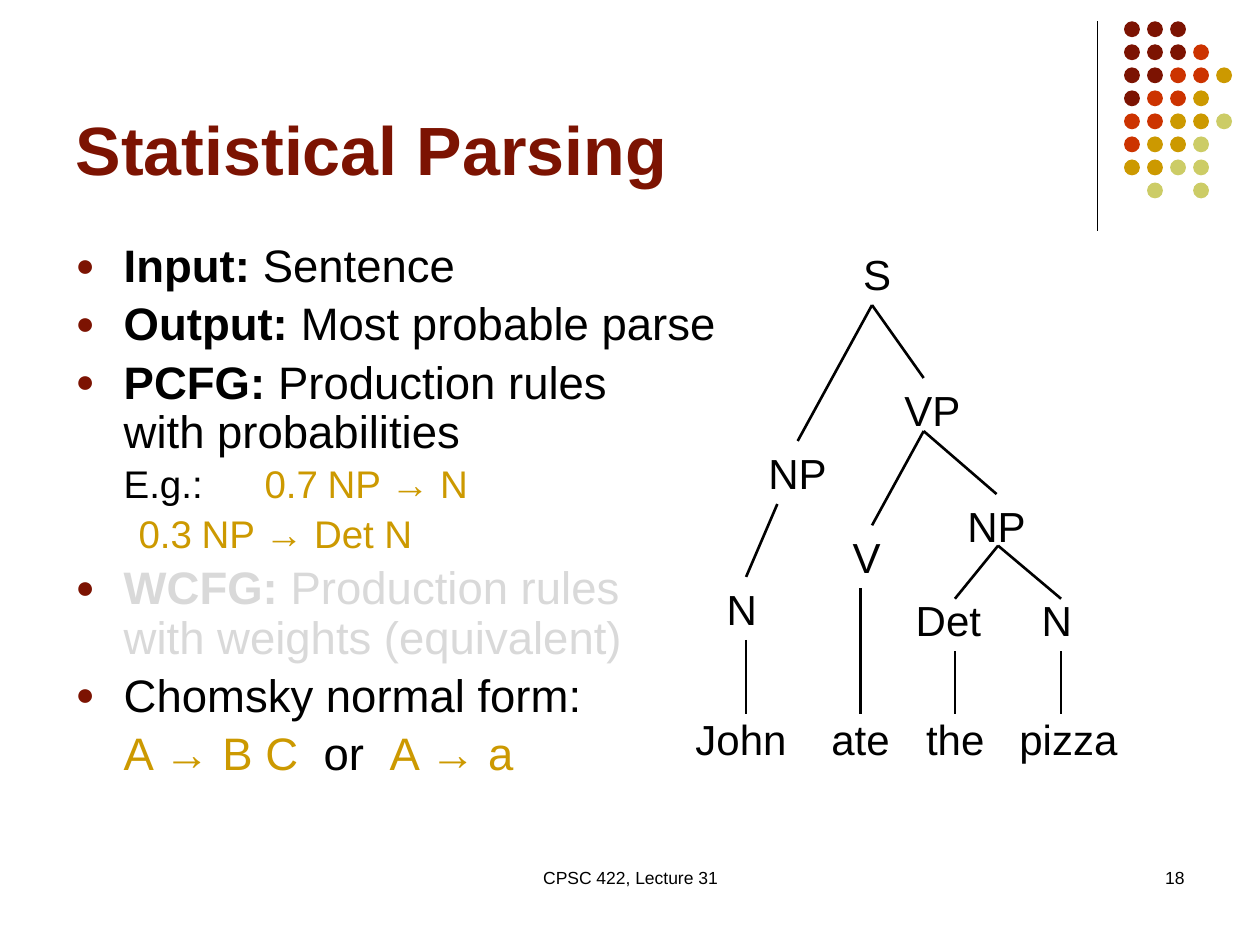
from dataclasses import dataclass

from lxml import etree
from pptx import Presentation
from pptx.dml.color import RGBColor
from pptx.enum.shapes import MSO_CONNECTOR, MSO_SHAPE
from pptx.enum.text import MSO_ANCHOR, MSO_AUTO_SIZE, PP_ALIGN
from pptx.oxml.ns import qn
from pptx.util import Cm, Pt

STRAIGHT = MSO_CONNECTOR.STRAIGHT
OVAL = MSO_SHAPE.OVAL
TOP, BOTTOM = MSO_ANCHOR.TOP, MSO_ANCHOR.BOTTOM
NO_FIT = MSO_AUTO_SIZE.NONE
LEFT, CENTER, RIGHT = PP_ALIGN.LEFT, PP_ALIGN.CENTER, PP_ALIGN.RIGHT
TOP_SITE = 0


@dataclass(frozen=True)
class Theme:
    font: str = "Arial"
    maroon: str = "7C1302"
    red: str = "CC3300"
    gold: str = "CC9900"
    lime: str = "CCCC66"
    ink: str = "000000"
    faded: str = "D9D9D9"
    title: float = 39
    body: float = 26
    example: float = 22
    node: float = 24
    footer: float = 10


class SlideBuilder:
    """Draws styled elements on one slide, with all lengths in centimetres."""

    def __init__(self, slide, theme):
        self.slide = slide
        self.theme = theme

    def style(self, run, size, color, bold=False):
        run.font.name = self.theme.font
        run.font.size = Pt(size)
        run.font.bold = bold
        run.font.color.rgb = RGBColor.from_string(color)

    def place(self, shape, left, top, width, height):
        shape.left, shape.top = Cm(left), Cm(top)
        shape.width, shape.height = Cm(width), Cm(height)

    def tabs(self, paragraph, stops):
        tab_list = etree.SubElement(paragraph._p.get_or_add_pPr(), qn("a:tabLst"))
        for stop in stops:
            etree.SubElement(tab_list, qn("a:tab"), pos=str(Cm(stop)), algn="l")

    def title(self, wording, *box):
        heading = self.slide.shapes.title
        self.place(heading, *box)
        frame = heading.text_frame
        frame.text = wording
        frame.auto_size = NO_FIT
        frame.vertical_anchor = BOTTOM
        frame.paragraphs[0].alignment = LEFT
        self.style(frame.paragraphs[0].runs[0], self.theme.title, self.theme.maroon, True)

    def bullet(self, properties, marked):
        if not marked:
            etree.SubElement(properties, qn("a:buNone"))
            return
        tint = etree.SubElement(properties, qn("a:buClr"))
        etree.SubElement(tint, qn("a:srgbClr"), val=self.theme.maroon)
        etree.SubElement(properties, qn("a:buSzPct"), val="70000")
        etree.SubElement(properties, qn("a:buFont"), typeface=self.theme.font)
        etree.SubElement(properties, qn("a:buChar"), char="●")

    def body(self, items, *box):
        outline = self.slide.placeholders[1]
        self.place(outline, *box)
        frame = outline.text_frame
        frame.auto_size = NO_FIT
        frame.vertical_anchor = TOP
        for index, (kind, pieces) in enumerate(items):
            paragraph = frame.paragraphs[0] if index == 0 else frame.add_paragraph()
            self.item(paragraph, kind, pieces)

    def item(self, paragraph, kind, pieces):
        margin, indent = {
            "bullet": (0.97, -0.97), "example": (0, 0.97), "plain": (0.97, 0),
        }[kind]
        is_example = kind == "example"
        size = self.theme.example if is_example else self.theme.body
        paragraph.level = int(is_example)
        paragraph.alignment = LEFT
        paragraph.line_spacing = 0.9
        paragraph.space_before = Pt(size * 0.2)
        properties = paragraph._p.get_or_add_pPr()
        properties.set("marL", str(Cm(margin)))
        properties.set("indent", str(Cm(indent)))
        self.bullet(properties, kind == "bullet")
        if is_example:
            self.tabs(paragraph, (3.15, 4.95))
        for wording, color, bold in pieces:
            for number, line in enumerate(wording.split("\n")):
                if number:
                    paragraph.add_line_break()
                run = paragraph.add_run()
                run.text = line
                self.style(run, size, color, bold)

    def label(self, wording, box, size, align=LEFT, wrap=True, stops=()):
        holder = self.slide.shapes.add_textbox(*map(Cm, box))
        frame = holder.text_frame
        frame.text = wording
        frame.word_wrap = wrap
        paragraph = frame.paragraphs[0]
        paragraph.alignment = align
        if stops:
            self.tabs(paragraph, stops)
        self.style(paragraph.runs[0], size, self.theme.ink)
        return holder

    def node(self, wording, left, top, width):
        return self.label(wording, (left, top, width, 1.27), self.theme.node, wrap=False)

    def line(self, start, end, weight=1.5, child=None):
        branch = self.slide.shapes.add_connector(STRAIGHT, *map(Cm, (*start, *end)))
        branch.line.color.rgb = RGBColor.from_string(self.theme.ink)
        branch.line.width = Pt(weight)
        etree.SubElement(branch._element.spPr, qn("a:effectLst"))
        if child is not None:
            branch.end_connect(child, TOP_SITE)

    def dot(self, left, top, diameter, color):
        spot = self.slide.shapes.add_shape(OVAL, *map(Cm, (left, top, diameter, diameter)))
        spot.shadow.inherit = False
        spot.fill.solid()
        spot.fill.fore_color.rgb = RGBColor.from_string(color)
        spot.line.fill.background()


def draw_ornament(builder):
    theme = builder.theme
    builder.line((22.12, 0.43), (22.12, 4.65), 0.75)
    palette = {"M": theme.maroon, "R": theme.red, "G": theme.gold, "L": theme.lime}
    pitch = 3.25 / 7
    rows = ("MMM", "MMMR", "MMRRG", "MRRG", "RRGGL", "RGGL", "GGLL", ".L.L")
    for row, codes in enumerate(rows):
        for column, code in enumerate(codes):
            if code in palette:
                builder.dot(22.66 + column * pitch, 0.43 + row * pitch, 0.32, palette[code])


def draw_outline(builder):
    ink, gold, faded = builder.theme.ink, builder.theme.gold, builder.theme.faded
    builder.title("Statistical Parsing", 1.27, 0.33, 20.96, 3.61)
    builder.body([
        ("bullet", [("Input:", ink, True), (" Sentence", ink, False)]),
        ("bullet", [("Output:", ink, True), (" Most probable parse", ink, False)]),
        ("bullet", [("PCFG:", ink, True),
                    (" Production rules\nwith probabilities", ink, False)]),
        ("example", [("E.g.:", ink, False), ("\t0.7\tNP → N", gold, False)]),
        ("example", [("\t0.3\tNP → Det N", gold, False)]),
        ("bullet", [("WCFG:", faded, True),
                    (" Production rules\nwith weights (equivalent)", faded, False)]),
        ("bullet", [("Chomsky normal form:", ink, False)]),
        ("plain", [("A → B C", gold, False), ("  or  ", ink, False),
                   ("A → a", gold, False)]),
    ], 1.27, 4.78, 13.54, 11.94)


def draw_parse_tree(builder):
    builder.node("S", 17.15, 4.88, 1.07)
    builder.label("John\tate\tthe\tpizza", (13.77, 14.25, 9.3, 1.27),
                  builder.theme.node, stops=(2.74, 4.65, 6.53))
    subject = builder.node("NP", 15.24, 8.89, 1.68)
    builder.node("VP", 17.98, 7.62, 1.65)
    builder.node("N", 14.4, 11.63, 1.12)
    builder.node("V", 16.94, 10.59, 1.07)
    direct_object = builder.node("NP", 19.25, 9.96, 1.68)
    builder.node("Det", 18.21, 11.86, 1.83)
    builder.node("N", 20.75, 11.86, 1.12)

    sentence_foot, verb_phrase_foot, object_foot = (17.58, 6.15), (18.62, 8.69), (20.12, 11)
    builder.line(sentence_foot, (16.08, 8.89), child=subject)
    builder.line(sentence_foot, (18.62, 7.62))
    builder.line((15.67, 10.16), (15.04, 11.63))
    builder.line(verb_phrase_foot, (17.58, 10.59))
    builder.line(verb_phrase_foot, (20.12, 9.96), child=direct_object)
    for x in (19.25, 21.39):
        builder.line(object_foot, (x, 12.07))
    for x, top in ((15.04, 12.9), (17.35, 11.86), (19.25, 13.13), (21.39, 13.13)):
        builder.line((x, top), (x, 14.4))


def main():
    deck = Presentation()
    deck.slide_width, deck.slide_height = Cm(25.4), Cm(19.05)
    builder = SlideBuilder(deck.slides.add_slide(deck.slide_layouts[1]), Theme())
    draw_ornament(builder)
    draw_outline(builder)
    draw_parse_tree(builder)
    footer_size = builder.theme.footer
    builder.label("CPSC 422, Lecture 31", (8.69, 17.35, 8.04, 1.27), footer_size, CENTER)
    builder.label("18", (18.21, 17.35, 5.92, 1.27), footer_size, RIGHT)
    deck.save("out.pptx")


if __name__ == "__main__":
    main()
